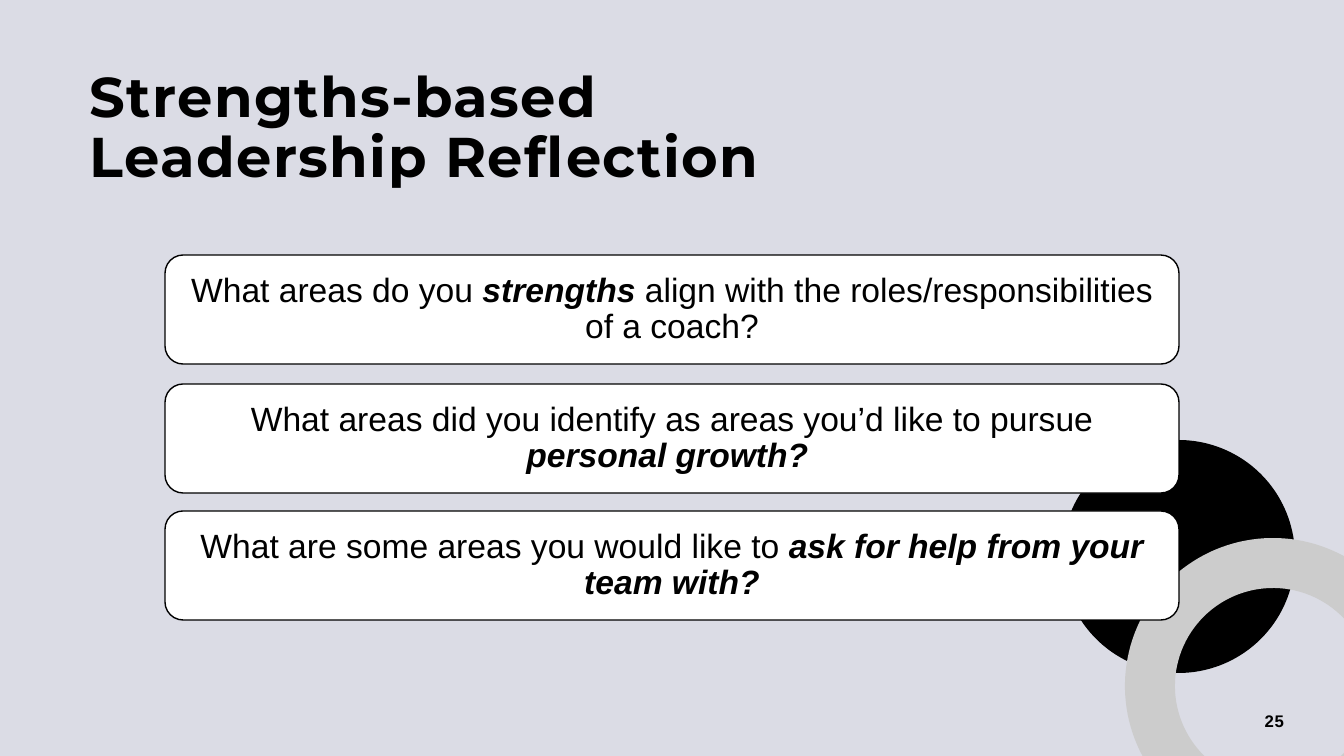
import math

from pptx import Presentation
from pptx import util as u
from pptx.dml.color import RGBColor
from pptx.enum import shapes, text

PX = 914400 / 100.8
W, H = 1344, 756
COLORS = {"bg": "DBDCE5", "ink": "000000", "card": "FFFFFF", "ring": "CCCCCC"}

TITLE = "Strengths-based Leadership Reflection"
NUMBER = "25"
QUESTIONS = [
    (255, [("What areas do you ", False), ("strengths ", True),
           ("align with the roles/responsibilities of a coach?", False)]),
    (384, [("What areas did you identify as areas you’d like to pursue ", False),
           ("personal growth? ", True)]),
    (511, [("What are some areas you would like to ", False),
           ("ask for help from your team with?", True)]),
]
CARD_LEFT, CARD_W, CARD_H, CARD_PAD = 165, 1014, 109, 15
DISC = (1062, 440, 233, 233)
RING_X, RING_Y, RING_OUT, RING_IN = 1273, 686, 148, 98
ARC_STEPS = 60

TITLE_FONT = {"name": "Montserrat", "size": u.Pt(40), "bold": True}
CARD_FONT = {"name": "Arial", "size": u.Pt(24)}
NUMBER_FONT = {"name": "Arial", "size": u.Pt(12), "bold": True}


def px(*values):
    return [round(v * PX) for v in values]


def rgb(name):
    return RGBColor.from_string(COLORS[name])


def paint(sp, fill, line=None):
    sp.shadow.inherit = False
    sp.fill.solid()
    sp.fill.fore_color.rgb = rgb(fill)
    if line:
        sp.line.color.rgb = rgb(line)
        sp.line.width = u.Pt(1)
    else:
        sp.line.fill.background()


def write(sp, runs, font, align, anchor, pad=0, line_spacing=1.0, spc=0):
    tf = sp.text_frame
    side, = px(pad)
    frame = {"word_wrap": True, "vertical_anchor": anchor, "margin_left": side,
             "margin_right": side, "margin_top": 0, "margin_bottom": 0}
    for key, value in frame.items():
        setattr(tf, key, value)
    p = tf.paragraphs[0]
    p.alignment = align
    p.line_spacing = line_spacing
    for words, strong in runs:
        r = p.add_run()
        r.text = words
        style = {**font, "bold": True, "italic": True} if strong else font
        for key, value in style.items():
            setattr(r.font, key, value)
        r.font.color.rgb = rgb("ink")
        if spc:
            r._r.get_or_add_rPr().set("spc", str(spc))


def arc(radius):
    start = math.pi - math.asin((H - RING_Y) / radius)
    end = 2 * math.pi - math.acos((W - RING_X) / radius)
    angles = [start + (end - start) * i / ARC_STEPS for i in range(ARC_STEPS + 1)]
    return [px(RING_X + radius * math.cos(a), RING_Y + radius * math.sin(a))
            for a in angles]


def main():
    prs = Presentation()
    prs.slide_width, prs.slide_height = px(W, H)
    s = prs.slides.add_slide(prs.slide_layouts[6])
    s.background.fill.solid()
    s.background.fill.fore_color.rgb = rgb("bg")

    disc = s.shapes.add_shape(shapes.MSO_SHAPE.OVAL, *px(*DISC))
    paint(disc, "ink")

    band = arc(RING_OUT) + arc(RING_IN)[::-1]
    fb = s.shapes.build_freeform(*band[0])
    fb.add_line_segments(band[1:], close=True)
    fb.move_to(*px(W, H - 3))
    fb.add_line_segments([px(W, H), px(W - 3, H)], close=True)
    paint(fb.convert_to_shape(), "ring")

    title = s.shapes.add_textbox(*px(90, 69, 748, 106))
    write(title, [(TITLE, False)], TITLE_FONT, text.PP_ALIGN.LEFT,
          text.MSO_ANCHOR.TOP, line_spacing=0.9, spc=100)

    for top, runs in QUESTIONS:
        card = s.shapes.add_shape(shapes.MSO_SHAPE.ROUNDED_RECTANGLE,
                                  *px(CARD_LEFT, top, CARD_W, CARD_H))
        paint(card, "card", "ink")
        write(card, runs, CARD_FONT, text.PP_ALIGN.CENTER,
              text.MSO_ANCHOR.MIDDLE, pad=CARD_PAD, line_spacing=0.9)

    number = s.shapes.add_textbox(*px(982, 701, 302, 40))
    write(number, [(NUMBER, False)], NUMBER_FONT, text.PP_ALIGN.RIGHT,
          text.MSO_ANCHOR.MIDDLE, spc=50)

    prs.save("out.pptx")


if __name__ == "__main__":
    main()
